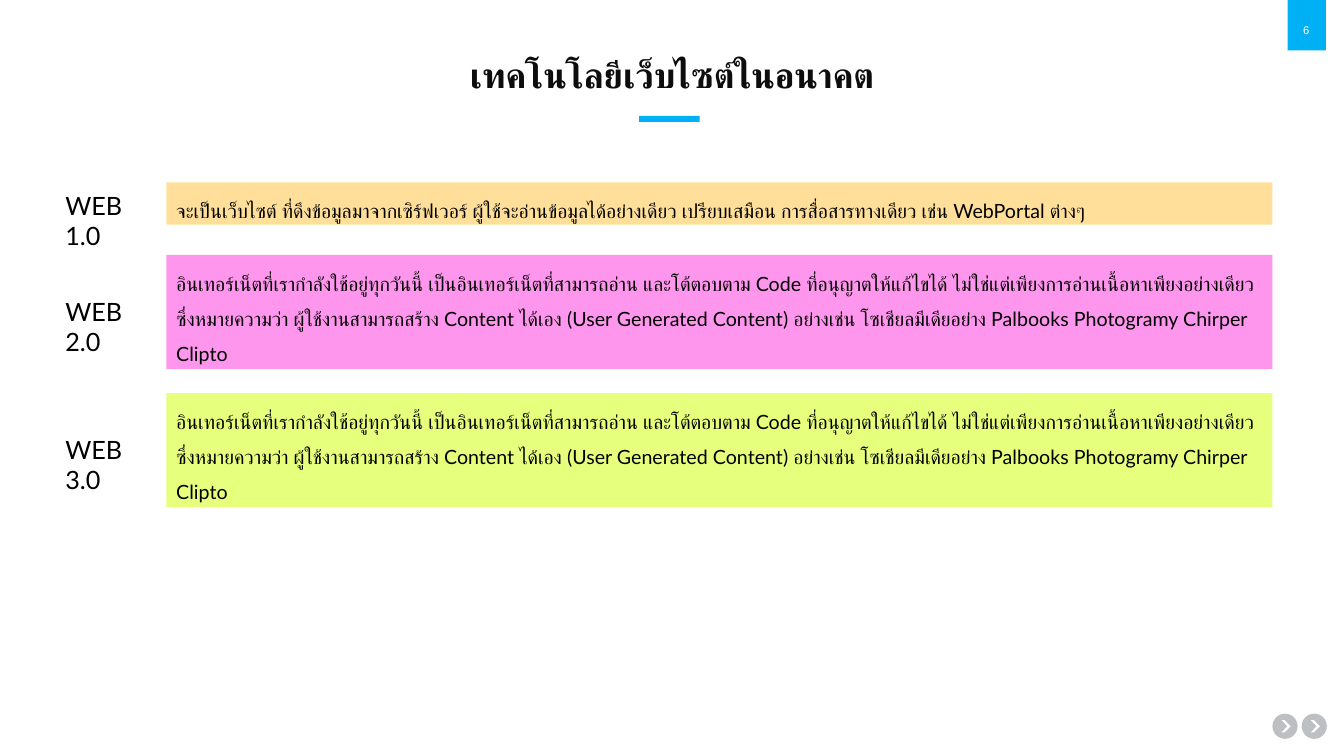
from lxml.etree import SubElement
from pptx import Presentation
from pptx.dml.color import RGBColor
from pptx.enum.shapes import MSO_SHAPE as Shape
from pptx.enum.text import MSO_ANCHOR as Anchor, PP_ALIGN as Align
from pptx.oxml.ns import qn
from pptx.util import Inches, Pt

THEME = {
    "accent": "00B0F5", "button": "7D8287", "white": "FFFFFF",
    "number": "FEFEFE", "title": "0D0D0D", "text": "000000",
    "font": "Lato", "number_font": "Arial",
    "title_size": 25, "label_size": 18, "body_size": 14, "number_size": 8,
}

TITLE = "เทคโนโลยีเว็บไซต์ในอนาคต"
PAGE_NUMBER = "6"
INTERACTIVE_WEB = (
    "อินเทอร์เน็ตที่เรากำลังใช้อยู่ทุกวันนี้ เป็นอินเทอร์เน็ตที่สามารถอ่าน และโต้ตอบตาม Code "
    "ที่อนุญาตให้แก้ไขได้ ไม่ใช่แต่เพียงการอ่านเนื้อหาเพียงอย่างเดียว ซึ่งหมายความว่า "
    "ผู้ใช้งานสามารถสร้าง Content ได้เอง (User Generated Content) อย่างเช่น "
    "โซเชียลมีเดียอย่าง Palbooks Photogramy Chirper Clipto"
)
READ_ONLY_WEB = (
    "จะเป็นเว็บไซต์ ที่ดึงข้อมูลมาจากเซิร์ฟเวอร์ ผู้ใช้จะอ่านข้อมูลได้อย่างเดียว "
    "เปรียบเสมือน การสื่อสารทางเดียว เช่น WebPortal ต่างๆ"
)
# label, label top, description, box top, box height, box colour
GENERATIONS = [
    ("WEB 1.0", 1.84, READ_ONLY_WEB, 1.81, 0.42, "FFDF99"),
    ("WEB 2.0", 2.89, INTERACTIVE_WEB, 2.53, 1.13, "FF96ED"),
    ("WEB 3.0", 4.26, INTERACTIVE_WEB, 3.9, 1.13, "E6FF7D"),
]
LABEL_LEFT, LABEL_WIDTH, LABEL_HEIGHT = 0.55, 1.1, 0.4
BOX_LEFT, BOX_WIDTH = 1.65, 10.97
BUTTON_LEFTS, BUTTON_TOP, BUTTON_SIZE = (12.91, 12.62), 7.08, 0.25
CHEVRON_WIDTH, CHEVRON_HEIGHT = 0.09, 0.12


def add_block(shapes, kind, left, top, width, height, color):
    shape = shapes.add_shape(kind, Inches(left), Inches(top), Inches(width), Inches(height))
    shape.shadow.inherit = False
    shape.fill.solid()
    shape.fill.fore_color.rgb = RGBColor.from_string(color)
    shape.line.fill.background()
    return shape


def add_text_box(slide, left, top, width, height):
    return slide.shapes.add_textbox(Inches(left), Inches(top), Inches(width), Inches(height))


def write_text(shape, text, size, color, font=THEME["font"], bold=False,
               align=Align.LEFT, anchor=Anchor.TOP, spacing=1.0):
    frame = shape.text_frame
    frame.word_wrap = True
    frame.vertical_anchor = anchor
    paragraph = frame.paragraphs[0]
    paragraph.text = text
    paragraph.alignment = align
    paragraph.line_spacing = spacing
    paragraph.font.name = font
    paragraph.font.size = Pt(size)
    paragraph.font.bold = bold
    paragraph.font.color.rgb = RGBColor.from_string(color)
    # Thai text takes its typeface from the complex-script font
    defaults = paragraph._p.pPr.find(qn("a:defRPr"))
    SubElement(defaults, qn("a:cs"), typeface=font)


def add_page_number(slide):
    add_block(slide.shapes, Shape.RECTANGLE, 12.77, -0.03, 0.38, 0.53, THEME["accent"])
    number = add_text_box(slide, 12.72, 0.19, 0.47, 0.21)
    write_text(number, PAGE_NUMBER, THEME["number_size"], THEME["number"],
               font=THEME["number_font"], align=Align.CENTER, anchor=Anchor.MIDDLE)


def add_next_button(slide, left):
    group = slide.shapes.add_group_shape()
    circle = add_block(group.shapes, Shape.OVAL, left, BUTTON_TOP,
                       BUTTON_SIZE, BUTTON_SIZE, THEME["button"])
    color = circle.fill._xPr.find(qn("a:solidFill"))[0]
    SubElement(color, qn("a:alpha"), val="50000")
    chevron = add_block(group.shapes, Shape.CHEVRON,
                        left + (BUTTON_SIZE - CHEVRON_WIDTH) / 2 + 0.01,
                        BUTTON_TOP + (BUTTON_SIZE - CHEVRON_HEIGHT) / 2,
                        CHEVRON_WIDTH, CHEVRON_HEIGHT, THEME["white"])
    chevron.adjustments[0] = 0.66


def add_title(slide):
    title = add_text_box(slide, 0, 0.49, 13.33, 0.55)
    write_text(title, TITLE, THEME["title_size"], THEME["title"], bold=True,
               align=Align.CENTER, anchor=Anchor.MIDDLE, spacing=0.9)
    add_block(slide.shapes, Shape.RECTANGLE, 6.34, 1.15, 0.6, 0.06, THEME["accent"])


def add_generation(slide, label, label_top, description, top, height, color):
    box = add_block(slide.shapes, Shape.RECTANGLE, BOX_LEFT, top, BOX_WIDTH, height, color)
    write_text(box, description, THEME["body_size"], THEME["text"], spacing=1.5)
    label_box = add_text_box(slide, LABEL_LEFT, label_top, LABEL_WIDTH, LABEL_HEIGHT)
    write_text(label_box, label, THEME["label_size"], THEME["text"])


def main():
    presentation = Presentation()
    presentation.slide_width, presentation.slide_height = Inches(13.33), Inches(7.5)
    slide = presentation.slides.add_slide(presentation.slide_layouts[6])
    add_page_number(slide)
    for left in BUTTON_LEFTS:
        add_next_button(slide, left)
    add_title(slide)
    for generation in GENERATIONS:
        add_generation(slide, *generation)
    presentation.save("out.pptx")


if __name__ == "__main__":
    main()
